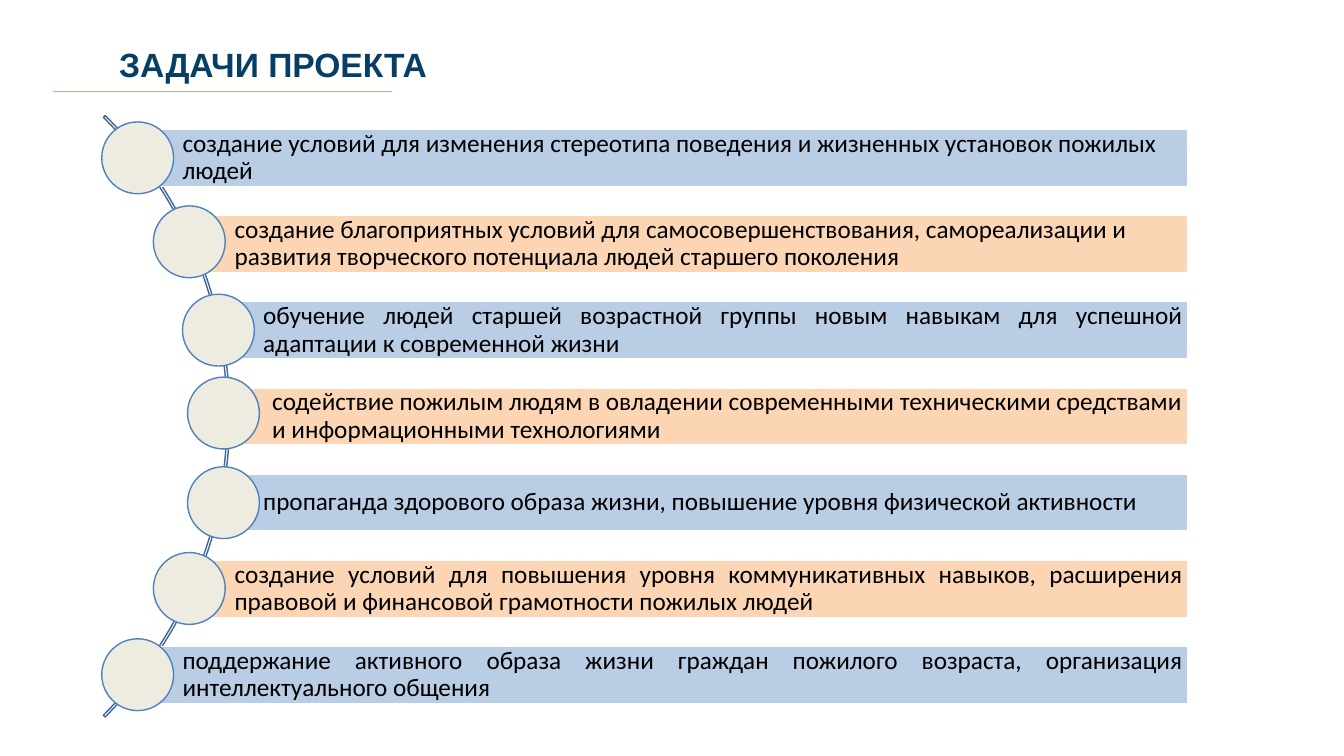
from pptx import Presentation
from pptx.dml.color import RGBColor
from pptx.enum import shapes, text
from pptx.oxml.ns import qn
from pptx.util import Pt

TITLE = "ЗАДАЧИ ПРОЕКТА"
# (task, bar left, circle left, circle top, justified)
TASKS = [
    ("создание условий для изменения стереотипа поведения и жизненных установок "
     "пожилых людей", 98, 72.7, 87.1, False),
    ("создание благоприятных условий для самосовершенствования, самореализации и "
     "развития творческого потенциала людей старшего поколения", 135.2, 109.6, 147.1, False),
    ("обучение людей старшей возрастной группы новым навыкам для успешной адаптации "
     "к современной жизни", 155.6, 130.4, 210.2, True),
    ("содействие пожилым людям в овладении современными техническими средствами и "
     "информационными технологиями", 162, 134, 269.4, False),
    ("пропаганда здорового образа жизни, повышение уровня физической активности",
     155.6, 134, 333.4, False),
    ("создание условий для повышения уровня коммуникативных навыков, расширения "
     "правовой и финансовой грамотности пожилых людей", 135.2, 109.6, 394.7, True),
    ("поддержание активного образа жизни граждан пожилого возраста, организация "
     "интеллектуального общения", 98, 72.7, 456.3, True),
]
COLORS = {"title": "073E65", "rule": "CCA888", "arc": "3F6797", "blue": "B9CDE5",
          "peach": "FCD5B5", "white": "FFFFFF", "circle": "EEECE1",
          "outline": "4F81BD", "text": "000000"}
BAR_TOP, BAR_STEP, BAR_HEIGHT, BAR_RIGHT = 92.4, 61.54, 40.8, 848.4
CIRCLE = 51.3
ARC_X, ARC_Y, ARC_SIZE = -443.5, -6.5, 607.6

prs = Presentation()
prs.slide_width, prs.slide_height = Pt(960), Pt(540)
s = prs.slides.add_slide(prs.slide_layouts[6])


def rgb(name):
    return RGBColor.from_string(COLORS[name])


def add_shape(kind, x, y, w, h, line, fill=None):
    sp = s.shapes.add_shape(kind, Pt(x), Pt(y), Pt(w), Pt(h))
    sp.shadow.inherit = False
    if fill:
        sp.fill.solid()
        sp.fill.fore_color.rgb = rgb(fill)
    else:
        sp.fill.background()
    sp.line.color.rgb = rgb(line)
    sp.line.width = Pt(1)
    return sp


def write(sp, words, size, font, color, bold=False, justified=False,
          left=7.2, pad=3.6, spacing=1.0, anchor=text.MSO_ANCHOR.TOP):
    tf = sp.text_frame
    tf.word_wrap = True
    tf.vertical_anchor = anchor
    tf.margin_left = Pt(left)
    tf.margin_right = tf.margin_top = tf.margin_bottom = Pt(pad)
    p = tf.paragraphs[0]
    p.alignment = text.PP_ALIGN.JUSTIFY if justified else text.PP_ALIGN.LEFT
    p.line_spacing = spacing
    r = p.add_run()
    r.text = words
    r.font.size, r.font.name, r.font.bold = Pt(size), font, bold
    r.font.color.rgb = rgb(color)


title = s.shapes.add_textbox(Pt(49), Pt(28.1), Pt(910.8), Pt(36))
write(title, TITLE, 24, "Arial", "title", bold=True, left=36)

rule = s.shapes.add_connector(shapes.MSO_CONNECTOR.STRAIGHT,
                              Pt(38.2), Pt(65.5), Pt(280), Pt(65.5))
rule.line.color.rgb = rgb("rule")
rule.line.width = Pt(1)
rule._element.spPr.append(rule._element.makeelement(qn("a:effectLst"), {}))

arc = add_shape(shapes.MSO_SHAPE.BLOCK_ARC, ARC_X, ARC_Y, ARC_SIZE, ARC_SIZE, "arc")
for i, value in enumerate((189, 27, 0.003)):
    arc.adjustments[i] = value

for i, (task, bar_x, circle_x, circle_y, justified) in enumerate(TASKS):
    bar = add_shape(shapes.MSO_SHAPE.RECTANGLE, bar_x, BAR_TOP + i * BAR_STEP,
                    BAR_RIGHT - bar_x, BAR_HEIGHT, "white", ("blue", "peach")[i % 2])
    write(bar, task, 18, "Calibri", "text", justified=justified, left=32.4,
          spacing=0.9, anchor=text.MSO_ANCHOR.MIDDLE)
    add_shape(shapes.MSO_SHAPE.OVAL, circle_x, circle_y, CIRCLE, CIRCLE,
              "outline", "circle")

prs.save("out.pptx")
